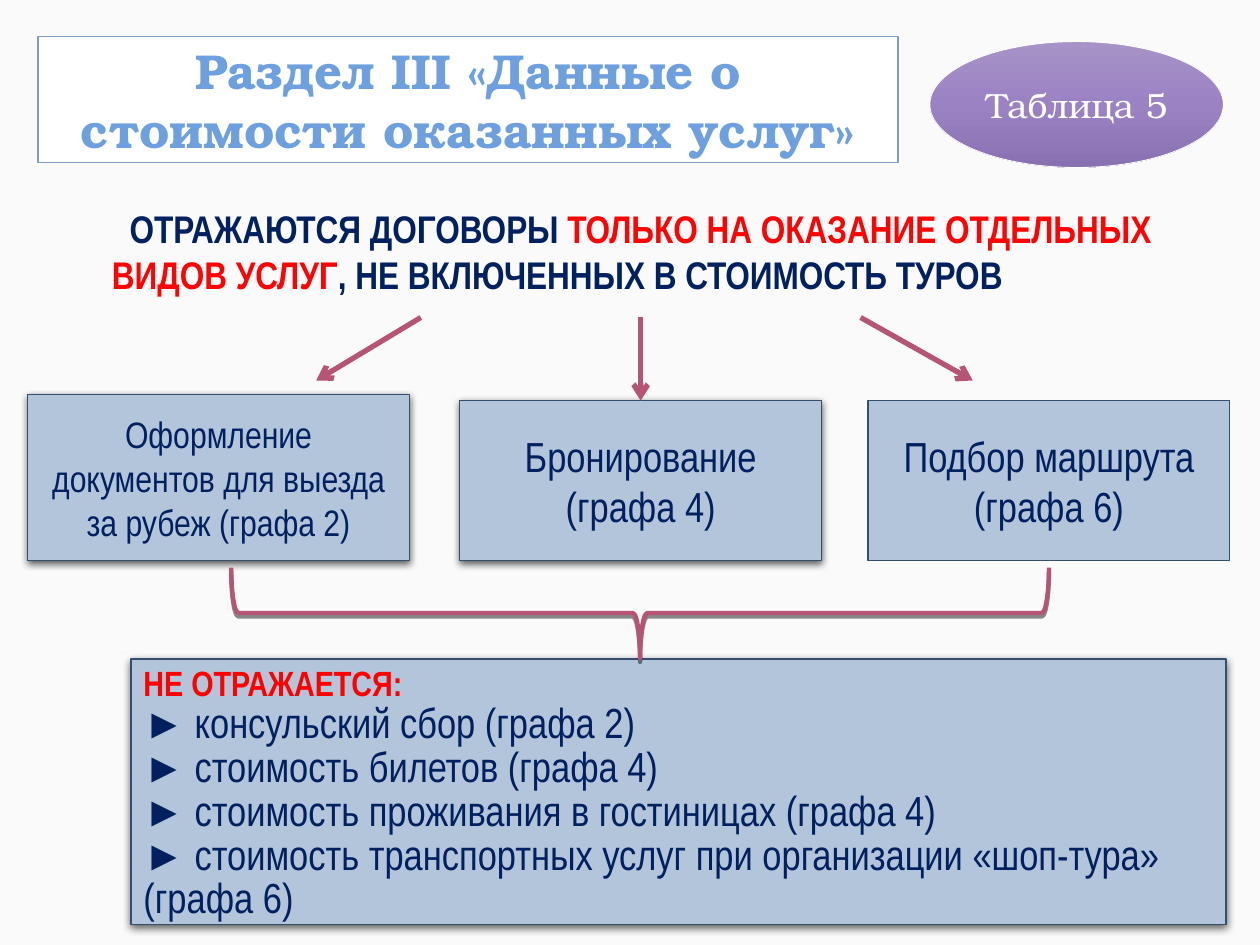
"""Build a slide on contracts for single travel services."""
from copy import deepcopy
from dataclasses import dataclass, field
from typing import Any

from lxml import etree
from pptx import Presentation
from pptx.dml.color import RGBColor
from pptx.enum.shapes import MSO_CONNECTOR, MSO_SHAPE
from pptx.enum.text import MSO_ANCHOR, PP_ALIGN
from pptx.oxml.ns import qn
from pptx.util import Inches, Pt

RECT, OVAL, BRACE = MSO_SHAPE.RECTANGLE, MSO_SHAPE.OVAL, MSO_SHAPE.LEFT_BRACE
STRAIGHT = MSO_CONNECTOR.STRAIGHT
LEFT, MID = PP_ALIGN.LEFT, PP_ALIGN.CENTER
TOP, CENTRE = MSO_ANCHOR.TOP, MSO_ANCHOR.MIDDLE
WIDE, HIGH = Inches(10), Inches(7.5)
COLS, ROWS = 100, 75
SANS, SERIF = "Arial Narrow", "TeX Gyre Bonum"
NAVY, RED, ROSE, PALE, EDGE = "002060", "FD0303", "B55475", "B3C5DA", "344E6D"
CARD_SHADE = (63, 4.5, 1.5)
BRACE_SHADE = (45, 0, 2)


@dataclass
class Run:
    """A stretch of text with its look."""
    text: str
    size: float
    color: str = NAVY
    bold: bool = False
    name: str = SANS


@dataclass
class Box:
    """A shape placed in columns and rows of the grid."""
    at: tuple[float, float, float, float]
    lines: list[list[Run]] = field(default_factory=list)
    kind: Any = RECT
    fill: str | None = PALE
    edge: str = EDGE
    weight: float = 0.75
    shade: tuple[float, float, float] | None = None
    align: Any = MID


def rgb(code: str) -> RGBColor:
    """Turn a hex string into a colour."""
    return RGBColor.from_string(code)


def grid(col: float, row: float) -> tuple[int, int]:
    """Turn columns and rows into slide lengths."""
    return round(WIDE * col / COLS), round(HIGH * row / ROWS)


def place(at: tuple[float, float, float, float]) -> tuple[int, ...]:
    """Give left, top, width and height on the slide."""
    return grid(*at[:2]) + grid(*at[2:])


def style(item: Any, **look: Any) -> None:
    """Set every given format value on an object."""
    for key, value in look.items():
        setattr(item, key, value)


def write(frame: Any, lines: list[list[Run]], align: Any, anchor: Any) -> None:
    """Fill a text frame with lines of runs."""
    style(frame, word_wrap=True, vertical_anchor=anchor)
    for num, line in enumerate(lines):
        para = frame.add_paragraph() if num else frame.paragraphs[0]
        para.alignment = align
        for part in line:
            run = para.add_run()
            run.text = part.text
            style(run.font, name=part.name, size=Pt(part.size), bold=part.bold)
            run.font.color.rgb = rgb(part.color)


def cast(shape: Any, alpha: float, blur: float, dist: float) -> None:
    """Let a shape cast a black shadow downwards."""
    effect = shape.element.spPr.find(qn("a:effectLst"))
    outer = etree.SubElement(effect, qn("a:outerShdw"), blurRad=str(Pt(blur)),
                             dist=str(Pt(dist)), dir="5400000", rotWithShape="0")
    black = etree.SubElement(outer, qn("a:srgbClr"), val="000000")
    etree.SubElement(black, qn("a:alpha"), val=str(alpha * 1000))


def draw(slide: Any, box: Box) -> Any:
    """Draw a box with its text."""
    shape = slide.shapes.add_shape(box.kind, *place(box.at))
    shape.shadow.inherit = False
    if box.fill:
        shape.fill.solid()
        shape.fill.fore_color.rgb = rgb(box.fill)
    else:
        shape.fill.background()
    shape.line.color.rgb = rgb(box.edge)
    shape.line.width = Pt(box.weight)
    if box.shade:
        cast(shape, *box.shade)
    if box.lines:
        write(shape.text_frame, box.lines, box.align, CENTRE)
    return shape


def blend(shape: Any, codes: list[str]) -> None:
    """Fill a shape with three colours from top to bottom."""
    shape.fill.gradient()
    shape.fill.gradient_angle = 270
    stops = shape.element.spPr.find(".//" + qn("a:gsLst"))
    stops.insert(1, deepcopy(stops[0]))
    for num, (stop, code) in enumerate(zip(shape.fill.gradient_stops, codes)):
        stop.position = num / 2
        stop.color.rgb = rgb(code)


def arrow(slide: Any, start: tuple[float, float], end: tuple[float, float]) -> Any:
    """Draw an arrow between two grid points."""
    link = slide.shapes.add_connector(STRAIGHT, *grid(*start), *grid(*end))
    link.line.color.rgb = rgb(ROSE)
    link.line.width = Pt(3)
    etree.SubElement(link.line._get_or_add_ln(), qn("a:tailEnd"), type="arrow")
    etree.SubElement(link.element.spPr, qn("a:effectLst"))
    return link


def main() -> None:
    """Build and save the slide."""
    deck = Presentation()
    style(deck, slide_width=WIDE, slide_height=HIGH)
    slide = deck.slides.add_slide(deck.slide_layouts[6])
    slide.background.fill.solid()
    slide.background.fill.fore_color.rgb = rgb("FAFAFA")

    intro = slide.shapes.add_textbox(*place((7.9, 15.8, 86.9, 13.9)))
    write(intro.text_frame, [[
        Run("ОТРАЖАЮТСЯ ДОГОВОРЫ ", 22, bold=True),
        Run("ТОЛЬКО НА ОКАЗАНИЕ ОТДЕЛЬНЫХ ВИДОВ УСЛУГ", 22, RED, True),
        Run(", НЕ ВКЛЮЧЕННЫХ В СТОИМОСТЬ ТУРОВ", 22, bold=True),
    ]], LEFT, TOP)
    first = intro.text_frame.paragraphs[0]
    first._p.get_or_add_pPr().set("indent", str(Inches(0.14)))

    title = Run("Раздел III «Данные о стоимости оказанных услуг»", 28, "6E9FDE", True, SERIF)
    draw(slide, Box((3, 2.9, 68.3, 10), [[title]], fill="FFFFFF", edge="809EC2", weight=1))

    cards = [
        Box((2.2, 31.3, 30.3, 13.2),
            [[Run("Оформление документов для выезда за рубеж (графа 2)", 21)]], shade=CARD_SHADE),
        Box((36.5, 31.8, 28.7, 12.7), [[Run("Бронирование (графа 4)", 24)]], shade=CARD_SHADE),
        Box((68.9, 31.8, 28.7, 12.7),
            [[Run("Подбор маршрута", 24)], [Run("(графа 6)", 24)]]),
    ]
    book = [draw(slide, card) for card in cards][1]
    arrow(slide, (33.4, 25.2), (25.1, 30.2))
    arrow(slide, (50.85, 25.2), (50.85, 31.8)).end_connect(book, 0)
    arrow(slide, (68.3, 25.2), (77.2, 30.2))

    points = ["консульский сбор (графа 2)", "стоимость билетов (графа 4)",
              "стоимость проживания в гостиницах (графа 4)",
              "стоимость транспортных услуг при организации «шоп-тура» (графа 6)"]
    lines = [[Run("НЕ ОТРАЖАЕТСЯ:", 20, "FF0000", True)]]
    lines += [[Run(f"► {point}", 24)] for point in points]
    panel = draw(slide, Box((10.4, 52.3, 86.9, 21.1), lines, shade=CARD_SHADE, align=LEFT))
    for para in panel.text_frame.paragraphs[1:]:
        para.line_spacing = Pt(25)

    brace = draw(slide, Box((47.2, 16.2, 7.2, 64.9), kind=BRACE, fill=None,
                            edge=ROSE, weight=2.5, shade=BRACE_SHADE))
    brace.rotation = 270
    for num, share in enumerate((0.08, 0.5)):
        brace.adjustments[num] = share

    badge = draw(slide, Box((73.8, 3.3, 23.3, 10),
                            [[Run("Таблица 5", 20, "FFFFFF", name=SERIF)]],
                            OVAL, edge="FFFFFF", weight=0.5))
    blend(badge, ["A793C7", "9B82C3", "8970B1"])
    deck.save("out.pptx")


if __name__ == "__main__":
    main()
